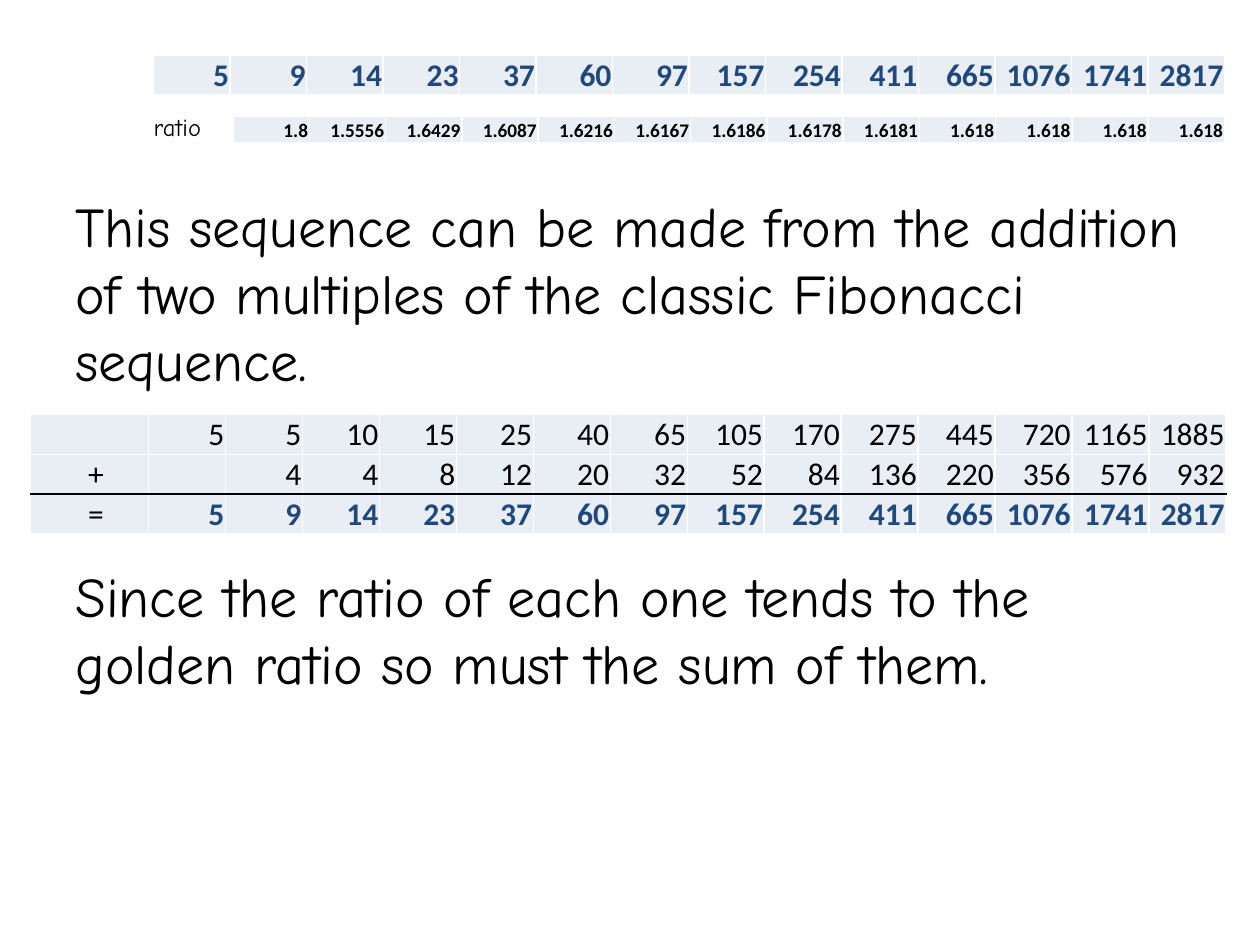
from lxml import etree
from pptx import Presentation
from pptx.dml.color import RGBColor
from pptx.enum.text import MSO_ANCHOR, PP_ALIGN
from pptx.oxml.ns import qn
from pptx.util import Inches, Pt

RIGHT, LEFT = PP_ALIGN.RIGHT, PP_ALIGN.LEFT
BOTTOM = MSO_ANCHOR.BOTTOM

BLACK = RGBColor(0x00, 0x00, 0x00)
WHITE = RGBColor(0xFF, 0xFF, 0xFF)
NAVY = RGBColor(0x1F, 0x49, 0x7D)
PALE_BLUE = RGBColor(0xE9, 0xED, 0xF4)

NUMBER_FONT = "Calibri"
TEXT_FONT = "Comic Neue"
TERM_COUNT = 14


def fibonacci_terms(first, second, count):
    terms = [first, second]
    while len(terms) < count:
        terms.append(terms[-2] + terms[-1])
    return terms


def style_runs(paragraph, font_name, size, color, bold=False):
    for run in paragraph.runs:
        run.font.name = font_name
        run.font.size = Pt(size)
        run.font.color.rgb = color
        run.font.bold = bold


def set_borders(cell, top=WHITE, bottom=WHITE):
    properties = cell._tc.get_or_add_tcPr()
    for tag, color in (("lnL", WHITE), ("lnR", WHITE), ("lnT", top), ("lnB", bottom)):
        line = etree.SubElement(properties, qn(f"a:{tag}"), w=str(Pt(1)))
        fill = etree.SubElement(line, qn("a:solidFill"))
        etree.SubElement(fill, qn("a:srgbClr"), val=str(color))


def fill_cell(cell, value, size, color, bold, top=WHITE, bottom=WHITE):
    set_borders(cell, top, bottom)
    cell.fill.solid()
    cell.fill.fore_color.rgb = PALE_BLUE
    cell.vertical_anchor = BOTTOM
    cell.margin_left = cell.margin_top = cell.margin_right = Inches(0.01)
    cell.margin_bottom = 0
    cell.text = str(value)
    paragraph = cell.text_frame.paragraphs[0]
    paragraph.alignment = RIGHT
    style_runs(paragraph, NUMBER_FONT, size, color, bold)


def add_plain_table(slide, row_count, column_count, box):
    table = slide.shapes.add_table(row_count, column_count, *map(Inches, box)).table
    table.first_row = table.horz_banding = False
    return table


def add_number_row(slide, values, box, size, color):
    table = add_plain_table(slide, 1, len(values), box)
    for cell, value in zip(table.rows[0].cells, values):
        fill_cell(cell, value, size, color, bold=True)


def add_sum_table(slide, upper, lower, total, box):
    """Column addition, ruled off in black above the total."""
    rows = [["", *upper], ["+", *lower], ["=", *total]]
    table = add_plain_table(slide, len(rows), len(rows[0]), box)
    sign_width = 0.94
    for column in table.columns:
        column.width = Inches((box[2] - sign_width) / len(total))
    table.columns[0].width = Inches(sign_width)

    for row_index, values in enumerate(rows):
        is_total = row_index == 2
        top = BLACK if is_total else WHITE
        bottom = BLACK if row_index == 1 else WHITE
        for column_index, value in enumerate(values):
            bold = is_total and column_index > 0
            color = NAVY if bold else BLACK
            fill_cell(table.cell(row_index, column_index), value, 18, color, bold, top, bottom)
        sign_cell = table.cell(row_index, 0)
        sign_cell.margin_left = Inches(0.46)
        sign_cell.text_frame.paragraphs[0].alignment = LEFT


def add_explanation(slide, box):
    text_frame = slide.shapes.add_textbox(*map(Inches, box)).text_frame
    text_frame.word_wrap = True
    text_frame.text = (
        "This sequence can be made from the addition of two multiples "
        "of the classic Fibonacci sequence.\n"
        "Since the ratio of each one tends to the golden ratio so must the sum of them."
    )
    for paragraph, gap in zip(text_frame.paragraphs, (6.4, 96)):
        paragraph.space_before = Pt(gap)
        style_runs(paragraph, TEXT_FONT, 32, BLACK)


def add_ratio_label(slide, box):
    text_frame = slide.shapes.add_textbox(*map(Inches, box)).text_frame
    text_frame.word_wrap = False
    text_frame.text = "ratio"
    style_runs(text_frame.paragraphs[0], TEXT_FONT, 14, BLACK)


def build_sequence_slide(presentation):
    slide = presentation.slides.add_slide(presentation.slide_layouts[6])
    sequence = fibonacci_terms(5, 9, TERM_COUNT)
    fives = fibonacci_terms(5, 5, TERM_COUNT)
    fours = ["", *fibonacci_terms(4, 4, TERM_COUNT - 1)]
    ratios = [f"{round(after / before, 4):g}" if after == 9 else str(round(after / before, 4))
              for before, after in zip(sequence, sequence[1:])]

    add_number_row(slide, sequence, (1.22, 0.44, 8.5, 0.31), 18, NAVY)
    add_sum_table(slide, fives, fours, sequence, (0.24, 3.29, 9.49, 0.93))
    add_explanation(slide, (0.5, 1.47, 9, 5.2))
    add_number_row(slide, ratios, (1.85, 0.92, 7.87, 0.21), 11, BLACK)
    add_ratio_label(slide, (1.12, 0.84, 0.65, 0.34))


def main():
    presentation = Presentation()
    presentation.slide_width = Inches(10)
    presentation.slide_height = Inches(7.5)
    build_sequence_slide(presentation)
    presentation.save("out.pptx")


if __name__ == "__main__":
    main()
